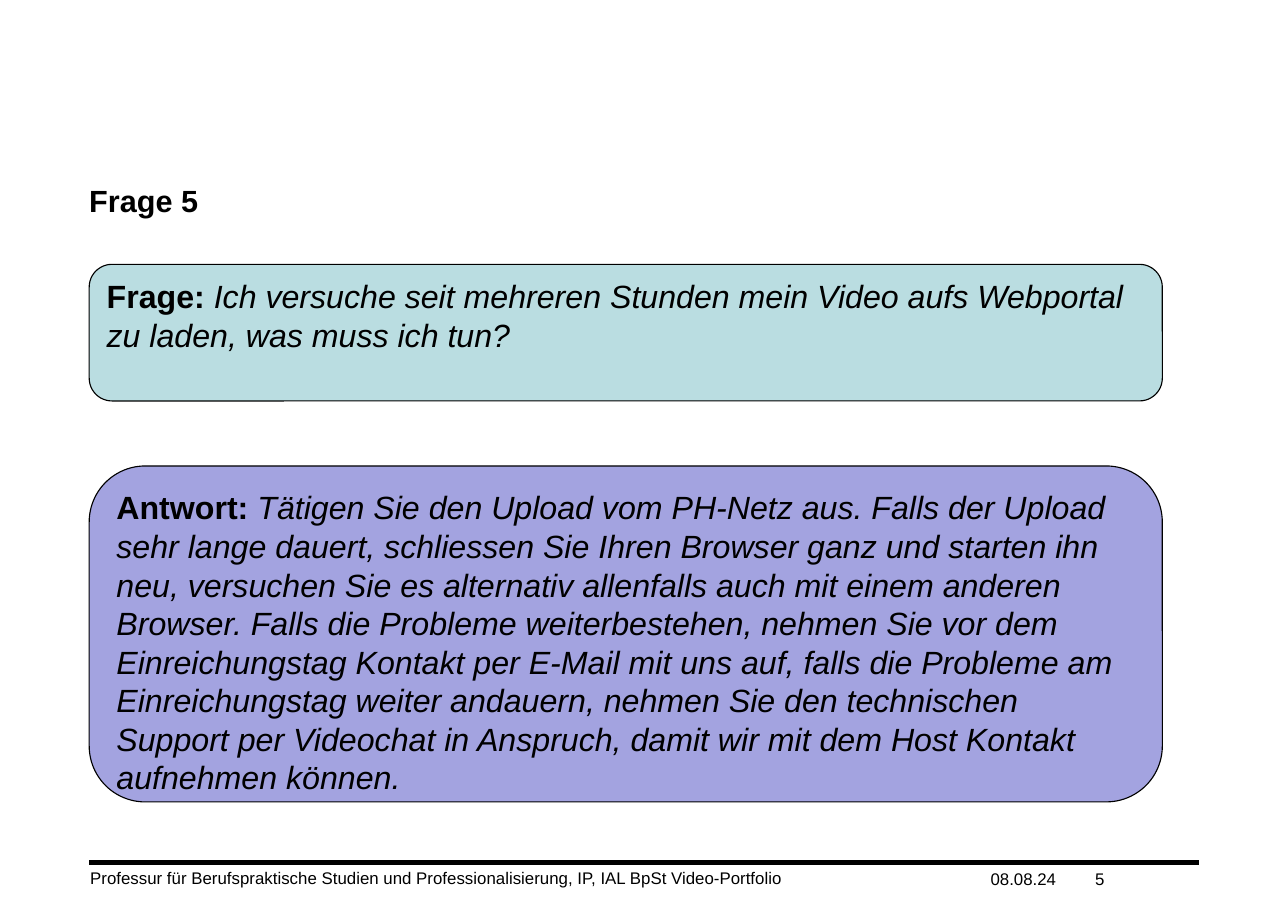
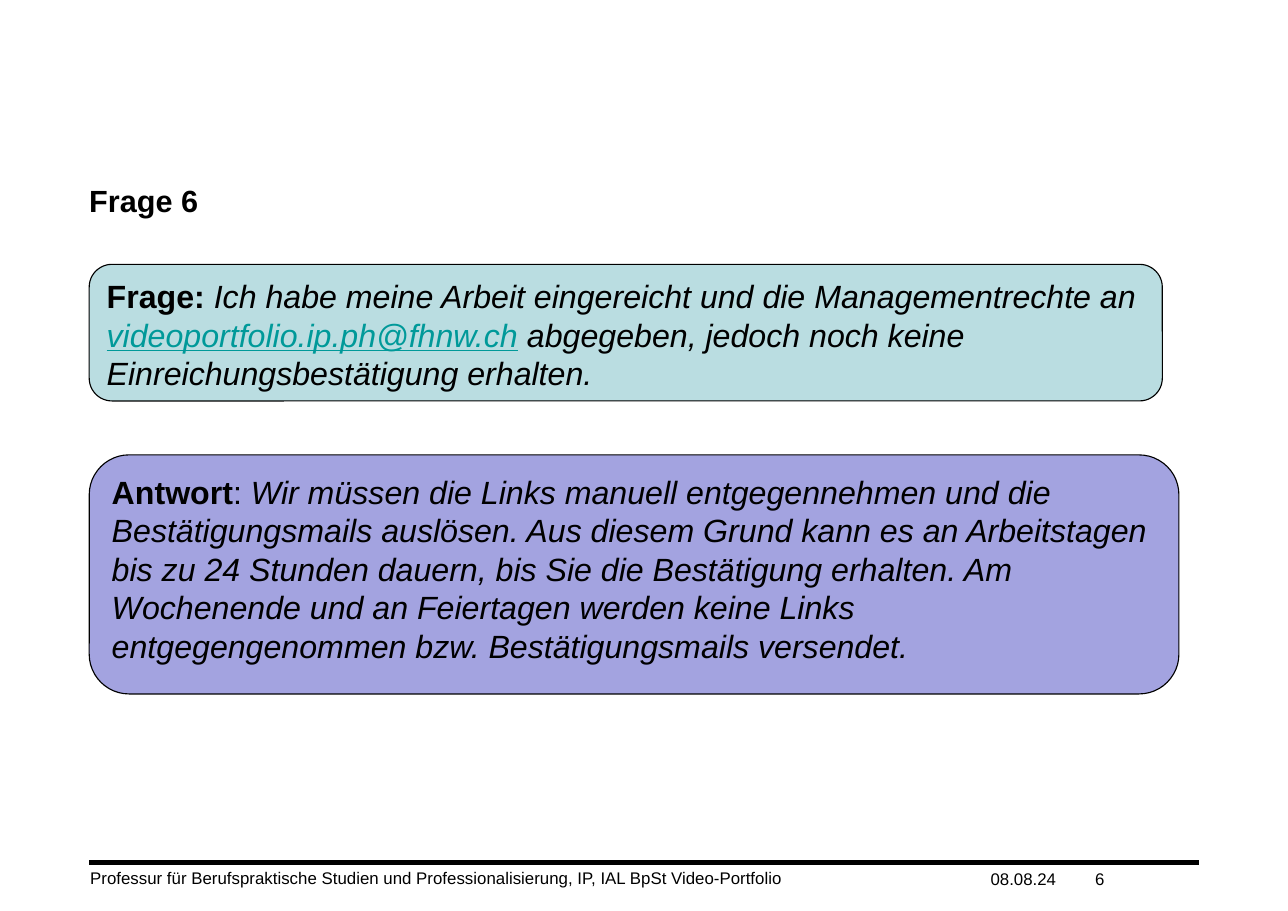
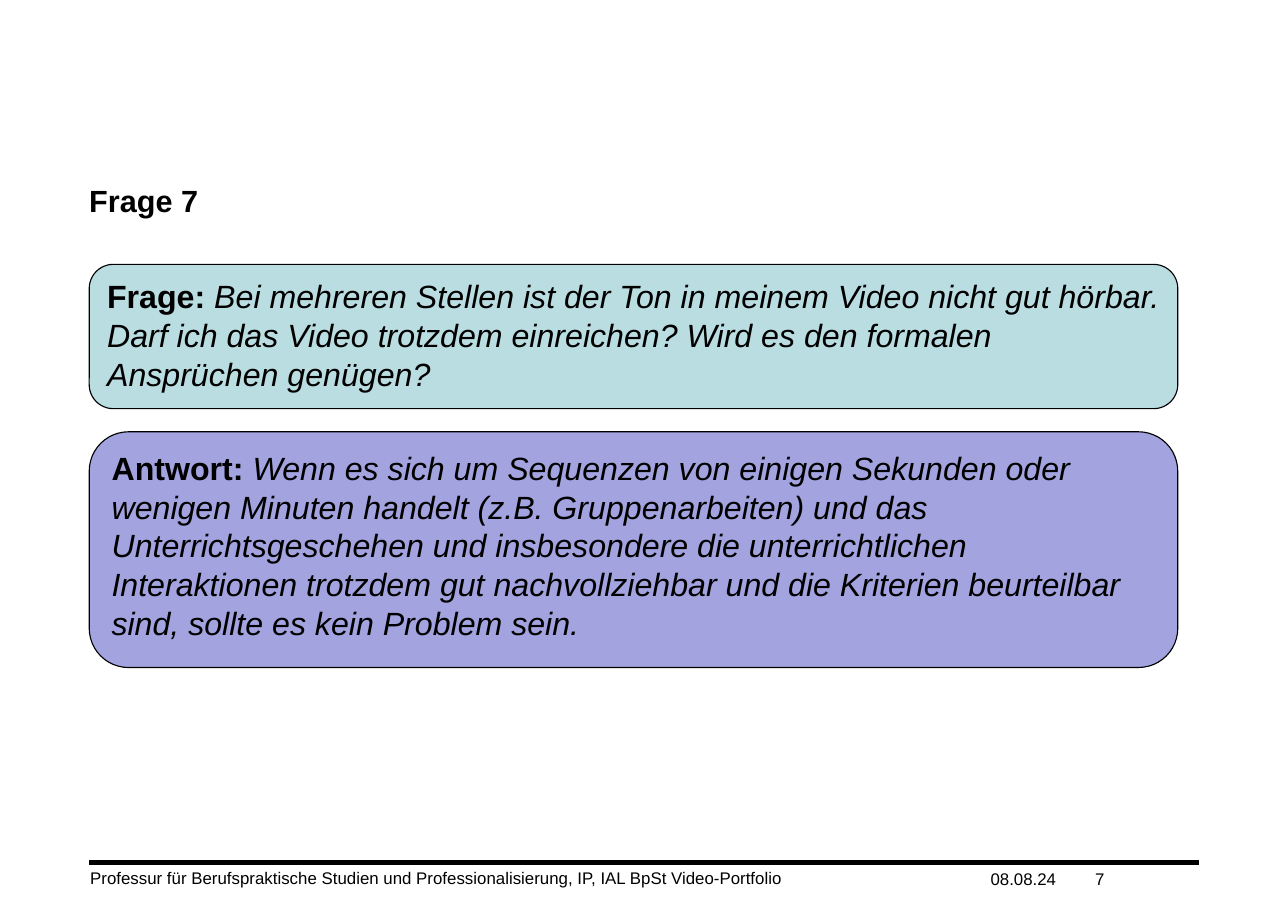
from typing import NamedTuple

from lxml import etree
from pptx import Presentation
from pptx import util as u
from pptx.dml.color import RGBColor
from pptx.enum import shapes, text
from pptx.oxml import ns

PX = 9144
BLACK = RGBColor(0x00, 0x00, 0x00)
QUESTION_FILL = RGBColor(0xBA, 0xDD, 0xE1)
ANSWER_FILL = RGBColor(0xA3, 0xA3, 0xE0)
ADDRESS_COLOR = RGBColor(0x00, 0x99, 0x99)
FONT = "Arial"
TITLE_SIZE, BODY_SIZE, FOOTER_SIZE = 20, 21, 11
LEFT = 81
CONTENT_WIDTH = 1007
BOX_TOP = 240
FOOTER_TEXT = "Professur für Berufspraktische Studien und Professionalisierung, IP, IAL BpSt Video-Portfolio"
DATE = "08.08.24"


class Box(NamedTuple):
    left: int
    top: int
    width: int
    height: int

    def emu(self):
        return [u.Emu(length * PX) for length in self]


def style_run(run, size, bold=False, italic=False, address=False):
    font = run.font
    font.name = FONT
    font.size = u.Pt(size)
    font.bold = bold
    font.italic = italic
    font.underline = address
    font.color.rgb = ADDRESS_COLOR if address else BLACK


def add_label(slide, box, words, size, bold=False, anchor=text.MSO_ANCHOR.TOP, inset=True):
    frame = slide.shapes.add_textbox(*box.emu()).text_frame
    frame.word_wrap = True
    frame.vertical_anchor = anchor
    if not inset:
        frame.margin_left = frame.margin_top = frame.margin_right = frame.margin_bottom = 0
    frame.text = words
    style_run(frame.paragraphs[0].runs[0], size, bold)


def add_title(slide, box, words):
    add_label(slide, box, words, TITLE_SIZE, bold=True, inset=False)


def add_footer(slide, box, number):
    left, top, width, height = box
    start_x, start_y, length, _ = box.emu()
    rule = slide.shapes.add_connector(
        shapes.MSO_CONNECTOR.STRAIGHT, start_x, start_y, start_x + length, start_y)
    rule.line.color.rgb = BLACK
    rule.line.width = u.Pt(3)
    etree.SubElement(rule._element.spPr, ns.qn("a:effectLst"))
    add_label(slide, Box(left - 9, top, 935, height), FOOTER_TEXT, FOOTER_SIZE)
    column = 95
    date_left = left + width - 2 * column + 1
    for index, words in enumerate((DATE, str(number))):
        add_label(slide, Box(date_left + index * column, top + 4, column, 20), words,
                  FOOTER_SIZE, anchor=text.MSO_ANCHOR.BOTTOM, inset=False)


def add_card(slide, box, fill, parts):
    card = slide.shapes.add_shape(shapes.MSO_SHAPE.ROUNDED_RECTANGLE, *box.emu())
    card.shadow.inherit = False
    card.fill.solid()
    card.fill.fore_color.rgb = fill
    card.line.color.rgb = BLACK
    card.line.width = u.Pt(0.75)
    frame = card.text_frame
    frame.word_wrap = True
    frame.vertical_anchor = text.MSO_ANCHOR.TOP
    paragraph = frame.paragraphs[0]
    paragraph.alignment = text.PP_ALIGN.LEFT
    for words, style in parts:
        run = paragraph.add_run()
        run.text = words
        style_run(run, BODY_SIZE, **style)


HEAD = {"bold": True}
PLAIN = {}
BODY = {"italic": True}
ADDRESS = {"italic": True, "address": True}

PAGES = [
    (5, Box(LEFT, BOX_TOP, 974, 124), [
        ("Frage: ", HEAD),
        ("Ich versuche seit mehreren Stunden mein Video aufs Webportal zu laden, "
         "was muss ich tun?", BODY),
    ], Box(LEFT, 423, 974, 305), [
        ("Antwort: ", HEAD),
        ("Tätigen Sie den Upload vom PH-Netz aus. Falls der Upload sehr lange dauert, "
         "schliessen Sie Ihren Browser ganz und starten ihn neu, versuchen Sie es alternativ "
         "allenfalls auch mit einem anderen Browser. Falls die Probleme weiterbestehen, "
         "nehmen Sie vor dem Einreichungstag Kontakt per E-Mail mit uns auf, falls die Probleme "
         "am Einreichungstag weiter andauern, nehmen Sie den technischen Support per Videochat "
         "in Anspruch, damit wir mit dem Host Kontakt aufnehmen können.", BODY),
    ]),
    (6, Box(LEFT, BOX_TOP, 974, 124), [
        ("Frage: ", HEAD),
        ("Ich habe meine Arbeit eingereicht und die Managementrechte an ", BODY),
        ("videoportfolio.ip.ph@fhnw.ch", ADDRESS),
        (" abgegeben, jedoch noch keine Einreichungsbestätigung erhalten.", BODY),
    ], Box(LEFT, 413, 989, 217), [
        ("Antwort", HEAD),
        (": ", PLAIN),
        ("Wir müssen die Links manuell entgegennehmen und die Bestätigungsmails auslösen. "
         "Aus diesem Grund kann es an Arbeitstagen bis zu 24 Stunden dauern, bis Sie die "
         "Bestätigung erhalten. Am Wochenende und an Feiertagen werden keine Links "
         "entgegengenommen bzw. Bestätigungsmails versendet.", BODY),
    ]),
    (7, Box(LEFT, BOX_TOP, 988, 131), [
        ("Frage: ", HEAD),
        ("Bei mehreren Stellen ist der Ton in meinem Video nicht gut hörbar. Darf ich das "
         "Video trotzdem einreichen? Wird es den formalen Ansprüchen genügen?", BODY),
    ], Box(LEFT, 392, 988, 214), [
        ("Antwort: ", HEAD),
        ("Wenn es sich um Sequenzen von einigen Sekunden oder wenigen Minuten handelt "
         "(z.B. Gruppenarbeiten) und das Unterrichtsgeschehen und insbesondere die "
         "unterrichtlichen Interaktionen trotzdem gut nachvollziehbar und die Kriterien "
         "beurteilbar sind, sollte es kein Problem sein.", BODY),
    ]),
]


def add_page(presentation, number, question_box, question, answer_box, answer):
    slide = presentation.slides.add_slide(presentation.slide_layouts[6])
    add_footer(slide, Box(LEFT, 783, CONTENT_WIDTH, 29), number)
    add_title(slide, Box(LEFT, 165, CONTENT_WIDTH, 40), f"Frage {number}")
    add_card(slide, question_box, QUESTION_FILL, question)
    add_card(slide, answer_box, ANSWER_FILL, answer)


def main():
    presentation = Presentation()
    presentation.slide_width = u.Emu(1169 * PX)
    presentation.slide_height = u.Emu(827 * PX)
    for page in PAGES:
        add_page(presentation, *page)
    presentation.save("out.pptx")


if __name__ == "__main__":
    main()
